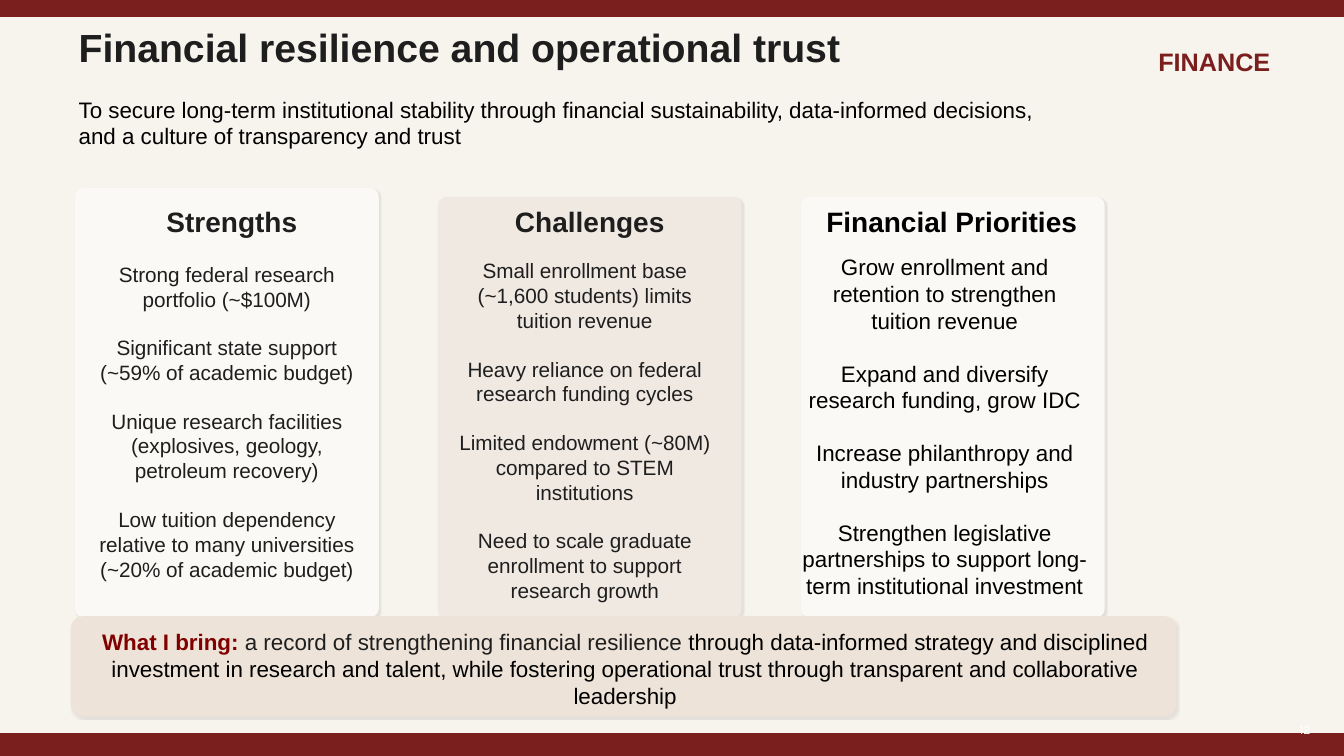
"""Build the finance slide: three cards, a banner and a framed page."""
from pptx import Presentation, util as u
from pptx.dml.color import RGBColor
from pptx.enum import shapes, text
from pptx.oxml import parse_xml
from pptx.oxml.ns import nsdecls

HUES = {"page": "F7F3ED", "red": "7B1E1E", "ink": "1E1E1E", "black": "000000",
        "pale": "FBF9F5", "sand": "F0E9E1", "tan": "EDE3D8",
        "maroon": "800000", "white": "FFFFFF"}
TITLE = "Financial resilience and operational trust"
GOAL = ("To secure long-term institutional stability through financial sustainability, "
        "data-informed decisions, and a culture of transparency and trust")
TAG = "FINANCE"
PAGE = "12"
BRING = [("What I bring: ", "maroon", True),
         ("a record of strengthening financial resilience ", "ink", False),
         ("through data-informed strategy and disciplined investment in research and talent, "
          "while fostering operational trust through transparent and collaborative leadership",
          "black", False)]
CARDS = [
    {"head": "Strengths", "fill": "pale", "ink": "ink", "size": 14.8, "top": 1.87,
     "shift": 0.25, "body": (0.15, 3.27, 2.7, 1.82),
     "items": ["Strong federal research portfolio (~$100M)",
               "Significant state support (~59% of academic budget)",
               "Unique research facilities (explosives, geology, petroleum recovery)",
               "Low tuition dependency relative to many universities (~20% of academic budget)"]},
    {"head": "Challenges", "fill": "sand", "ink": "ink", "size": 14.8, "top": 1.96,
     "shift": 0.2, "body": (0.2, 3.27, 2.5, 2),
     "items": ["Small enrollment base (~1,600 students) limits tuition revenue",
               "Heavy reliance on federal research funding cycles",
               "Limited endowment (~80M) compared to STEM institutions",
               "Need to scale graduate enrollment to support research growth"]},
    {"head": "Financial Priorities", "fill": "pale", "ink": "black", "size": 16, "top": 1.96,
     "shift": 0.19, "body": (0, 3.23, 2.84, 2),
     "items": ["Grow enrollment and retention to strengthen tuition revenue",
               "Expand and diversify research funding, grow IDC",
               "Increase philanthropy and industry partnerships",
               "Strengthen legislative partnerships to support long-term institutional investment"]},
]
WIDE, HIGH = 13.33, 7.5
LEFT, PITCH, CARD, FLOOR = 0.75, 3.6, 3, 6.12
LINE = 1.15
SHADE = ('<a:effectLst %s><a:outerShdw blurRad="12700" dist="19050" dir="2700000" '
         'algn="ctr" rotWithShape="0"><a:srgbClr val="000000"><a:alpha val="8000"/>'
         '</a:srgbClr></a:outerShdw></a:effectLst>' % nsdecls("a"))
ALIGN = text.PP_ALIGN

deck = Presentation()
deck.slide_width, deck.slide_height = u.Inches(WIDE), u.Inches(HIGH)
slide = deck.slides.add_slide(deck.slide_layouts[6])


def hue(name):
    return RGBColor.from_string(HUES[name])


def block(box, fill, round=None):
    kind = shapes.MSO_SHAPE.RECTANGLE if round is None else shapes.MSO_SHAPE.ROUNDED_RECTANGLE
    form = slide.shapes.add_shape(kind, *map(u.Inches, box))
    form.shadow.inherit = False
    form.fill.solid()
    form.fill.fore_color.rgb = form.line.color.rgb = hue(fill)
    form.line.width = u.Pt(1)
    if round is not None:
        form.adjustments[0] = round
        props = form._element.spPr
        props.remove(props.find("{*}effectLst"))
        props.append(parse_xml(SHADE))


def style(run, size, ink, bold=False, face="Arial"):
    font = run.font
    font.size, font.bold, font.name = u.Pt(size), bold, face
    font.color.rgb = hue(ink)


def write(box, lines, align, gap=0):
    """Write lines, each a list of (words, size, ink, bold, face) runs."""
    frame = slide.shapes.add_textbox(*map(u.Inches, box)).text_frame
    frame.word_wrap = True
    frame.vertical_anchor = text.MSO_ANCHOR.MIDDLE
    frame.margin_left = frame.margin_right = frame.margin_top = frame.margin_bottom = 0
    for n, line in enumerate(lines):
        para = frame.add_paragraph() if n else frame.paragraphs[0]
        para.alignment = align
        if n:
            para.space_before = u.Pt(gap)
        for words, *look in line:
            run = para.add_run()
            run.text = words
            style(run, *look)


slide.background.fill.solid()
slide.background.fill.fore_color.rgb = hue("page")
for top, tall in ((0, 0.16), (7.28, 0.22)):
    block((0, top, WIDE, tall), "red")

write((0.78, 0.63, 9.65, 0.45), [[(TITLE, 28, "ink", True)], [(GOAL, 16, "black")]],
      ALIGN.LEFT, 16 * LINE)
write((11, 0.5, 1.6, 0.22), [[(TAG, 18, "red", True)]], ALIGN.RIGHT)

for n, card in enumerate(CARDS):
    x, top, size, ink = LEFT + n * PITCH, card["top"], card["size"], card["ink"]
    block((x, top, CARD, FLOOR - top), card["fill"], 0.027)
    write((x + card["shift"], 2, 2.6, 0.4), [[(card["head"], 20, ink, True)]], ALIGN.CENTER)
    inset, *rest = card["body"]
    write((x + inset, *rest), [[(item, size, ink)] for item in card["items"]],
          ALIGN.CENTER, size * LINE)

block((0.71, FLOOR, 10.95, 0.98), "tan", 0.118)
write((0.95, 6.51, 10.5, 0.24), [[(words, 16, ink, bold) for words, ink, bold in BRING]],
      ALIGN.CENTER)
write((12.65, 7.15, 0.35, 0.18), [[(PAGE, 9, "white", False, "Karla")]], ALIGN.RIGHT)

deck.save("out.pptx")
